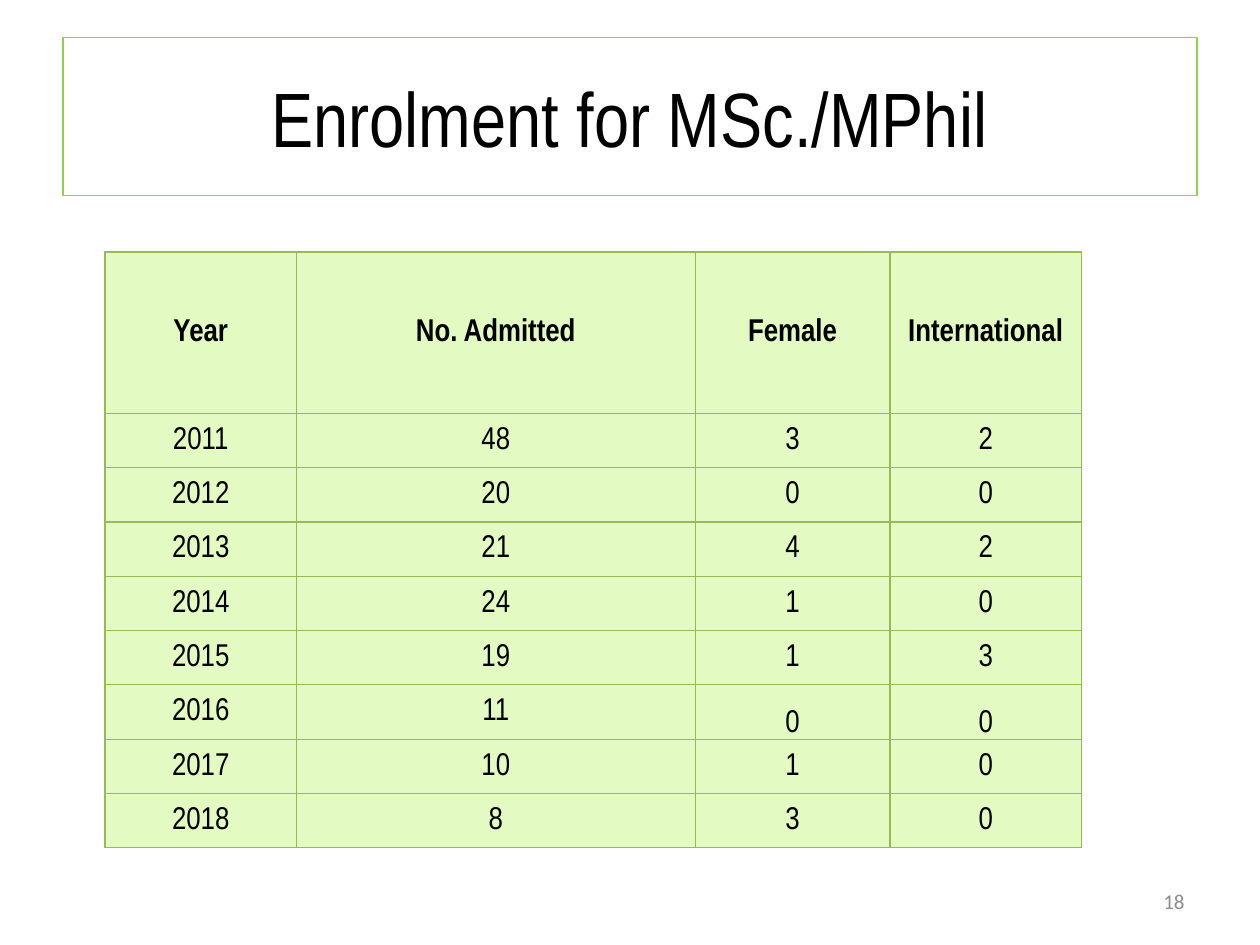
import pptx
import pptx.util
import pptx.dml.color
import pptx.enum.shapes
import pptx.enum.text
import pptx.oxml

Pt = pptx.util.Pt
RGBColor = pptx.dml.color.RGBColor
MSO_ANCHOR = pptx.enum.text.MSO_ANCHOR
PP_ALIGN = pptx.enum.text.PP_ALIGN

COLORS = {
    "text": "000000",
    "title_line": "92D050",
    "cell": "E3FBC2",
    "border": "98B955",
    "number": "8C8C8C",
}
NAMESPACE = "http://schemas.openxmlformats.org/drawingml/2006/main"


def style_text(paragraph, alignment, size, color, font="Arial Narrow", bold=False):
    paragraph.alignment = alignment
    paragraph.font.name = font
    paragraph.font.size = Pt(size)
    paragraph.font.bold = bold
    paragraph.font.color.rgb = RGBColor.from_string(COLORS[color])


def add_borders(cell):
    properties = cell._tc.get_or_add_tcPr()
    for side in ("lnL", "lnR", "lnT", "lnB"):
        properties.append(pptx.oxml.parse_xml(
            f'<a:{side} xmlns:a="{NAMESPACE}" w="{Pt(0.75)}"><a:solidFill>'
            f'<a:srgbClr val="{COLORS["border"]}"/></a:solidFill></a:{side}>'
        ))


presentation = pptx.Presentation()
presentation.slide_width = Pt(720)
presentation.slide_height = Pt(540)
slide = presentation.slides.add_slide(presentation.slide_layouts[6])

title = slide.shapes.add_shape(
    pptx.enum.shapes.MSO_SHAPE.RECTANGLE, Pt(36), Pt(21.6), Pt(648), Pt(90)
)
title.shadow.inherit = False
title.fill.background()
title.line.color.rgb = RGBColor.from_string(COLORS["title_line"])
title.line.width = Pt(0.75)
title.text_frame.word_wrap = True
title.text_frame.vertical_anchor = MSO_ANCHOR.MIDDLE
title.text_frame.text = "Enrolment for MSc./MPhil"
style_text(title.text_frame.paragraphs[0], PP_ALIGN.CENTER, 44, "text")

enrolment = [
    ("Year", "No. Admitted", "Female", "International"),
    ("2011", "48", "3", "2"),
    ("2012", "20", "0", "0"),
    ("2013", "21", "4", "2"),
    ("2014", "24", "1", "0"),
    ("2015", "19", "1", "3"),
    ("2016", "11", "0", "0"),
    ("2017", "10", "1", "0"),
    ("2018", "8", "3", "0"),
]
column_widths = [109.4, 227.8, 111.4, 109.4]
header_height, row_height = 92.2, 31.05

table = slide.shapes.add_table(
    len(enrolment), len(column_widths), Pt(60), Pt(144), Pt(558), Pt(340.6)
).table
table.horz_banding = False
for column, width in zip(table.columns, column_widths):
    column.width = Pt(width)

for row_index, values in enumerate(enrolment):
    is_header = row_index == 0
    table.rows[row_index].height = Pt(header_height if is_header else row_height)
    for column_index, value in enumerate(values):
        cell = table.cell(row_index, column_index)
        cell.text = value
        cell.margin_left = cell.margin_right = cell.margin_top = Pt(0.75)
        cell.margin_bottom = 0
        at_bottom = values[0] == "2016" and column_index >= 2
        cell.vertical_anchor = MSO_ANCHOR.BOTTOM if at_bottom else MSO_ANCHOR.MIDDLE
        style_text(cell.text_frame.paragraphs[0], PP_ALIGN.CENTER, 18, "text", bold=is_header)
        add_borders(cell)
        cell.fill.solid()
        cell.fill.fore_color.rgb = RGBColor.from_string(COLORS["cell"])

slide_number = slide.shapes.add_textbox(Pt(516), Pt(500.5), Pt(168), Pt(28.75))
slide_number.text_frame.word_wrap = True
slide_number.text_frame.vertical_anchor = MSO_ANCHOR.MIDDLE
slide_number.text_frame.text = "18"
style_text(slide_number.text_frame.paragraphs[0], PP_ALIGN.RIGHT, 12, "number", font="Calibri")

presentation.save("out.pptx")
